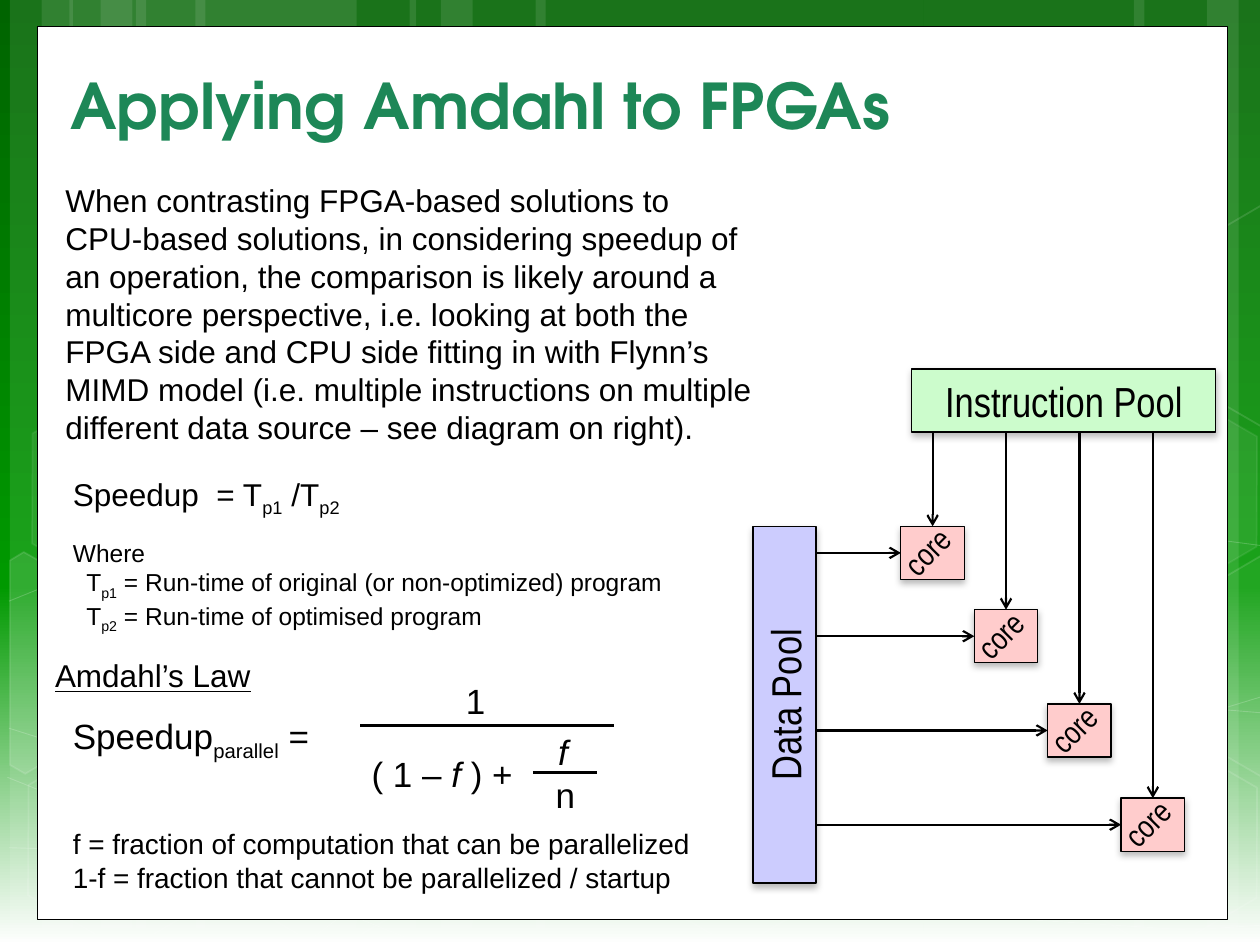
from copy import deepcopy

from lxml import etree
from pptx import Presentation
from pptx.dml.color import RGBColor
from pptx.enum.shapes import MSO_CONNECTOR, MSO_SHAPE
from pptx.enum.text import MSO_ANCHOR, MSO_AUTO_SIZE, PP_ALIGN
from pptx.oxml.ns import qn
from pptx.util import Cm, Pt

RECTANGLE = MSO_SHAPE.RECTANGLE
HEXAGON = MSO_SHAPE.HEXAGON
STRAIGHT = MSO_CONNECTOR.STRAIGHT
MIDDLE = MSO_ANCHOR.MIDDLE
BOTTOM = MSO_ANCHOR.BOTTOM
CENTER = PP_ALIGN.CENTER
GROW = MSO_AUTO_SIZE.SHAPE_TO_FIT_TEXT

BLACK = RGBColor(0x00, 0x00, 0x00)
WHITE = RGBColor(0xFF, 0xFF, 0xFF)
DARK_GREEN = RGBColor(0x00, 0x64, 0x00)
MID_GREEN = RGBColor(0x00, 0x99, 0x00)
TITLE_GREEN = RGBColor(0x1D, 0x87, 0x57)
POOL_GREEN = RGBColor(0xCC, 0xFC, 0xCC)
POOL_BLUE = RGBColor(0xCC, 0xCC, 0xFE)
CORE_PINK = RGBColor(0xFF, 0xCC, 0xCC)

BODY_FONT = "Arial"
DIAGRAM_FONT = "Arial Narrow"
TITLE_FONT = "TeX Gyre Adventor"

STRIPES = [(2.74, 4.45), (0.2, 1.27), (0.84, 2.11), (3.94, 4.45), (1.4, 1.27), (2.03, 2.11),
           (18.62, 4.45), (24.33, 1.27), (22.86, 2.11), (10.8, 7.82), (8.26, 1.27), (8.89, 2.11)]
HEXAGONS = [(8.48, 0.91, 4, 8), (12.62, 14.96, 6, 12), (0.28, 15.01, 0, 12), (0.36, 7.92, 7, 8),
            (4.42, 15.04, 0, 12), (21.18, 15.06, 0, 12), (21.18, 7.98, 7, 8)]
CUT_HEXAGONS = [
    ([(0.2, 11.3), (0.48, 11.13), (2.44, 12.24), (2.41, 14.48), (0.51, 15.6), (0.2, 15.42)], 10),
    ([(23.52, 12.32), (25.43, 11.2), (25.63, 11.33), (25.63, 15.57), (25.45, 15.67), (23.52, 14.55)], 4),
    ([(23.52, 5.26), (25.43, 4.14), (25.65, 4.27), (25.63, 8.51), (25.45, 8.61), (23.52, 7.49)], 0)]
WAVES = [
    [(0.18, 17.09), (4.83, 17.22), (11.63, 16.89), (20.12, 15.67), (25.58, 14)],
    [(0.18, 12.12), (3.07, 10.95), (8.81, 9.83), (16.61, 9.83), (25.58, 11.02)],
    [(0.15, 15.67), (8.48, 19.02)],
    [(0.18, 14.68), (3.25, 15.65), (9.07, 17.09), (15.95, 18.24), (24, 18.75), (25.58, 18.64)],
    [(6.15, 19.02), (9.86, 16.23), (15.44, 14.68), (20.17, 14.27), (24.21, 14.27), (25.55, 14.38)]]


def fade(holder, percent):
    color = holder.find(qn("a:solidFill")).find(qn("a:srgbClr"))
    etree.SubElement(color, qn("a:alpha"), val=str(percent * 1000))


def paint(shape, fill, line=None, width=0.75):
    shape.shadow.inherit = False
    if fill is None:
        shape.fill.background()
    else:
        shape.fill.solid()
        shape.fill.fore_color.rgb = fill
    if line is None:
        shape.line.fill.background()
    else:
        shape.line.color.rgb = line
        shape.line.width = Pt(width)


def paint_faint(shape, fill_alpha, line_alpha, width=1):
    paint(shape, WHITE if fill_alpha else None, WHITE if line_alpha else None, width)
    properties = shape._element.spPr
    if fill_alpha:
        fade(properties, fill_alpha)
    if line_alpha:
        fade(properties.find(qn("a:ln")), line_alpha)


def add_block(page, kind, left, top, width, height):
    return page.shapes.add_shape(kind, Cm(left), Cm(top), Cm(width), Cm(height))


def add_outline(page, points, closed):
    start, *rest = [(Cm(x), Cm(y)) for x, y in points]
    builder = page.shapes.build_freeform(*start)
    builder.add_line_segments(rest, close=closed)
    return builder.convert_to_shape()


def add_spans(para, spans, size, font=BODY_FONT, color=BLACK, bold=False):
    for words, style in spans:
        span = para.add_run()
        span.text = words
        span.font.size = Pt(size)
        span.font.name = font
        span.font.color.rgb = color
        span.font.bold = bold
        span.font.italic = style == "italic"
        span.font.underline = style == "underline"
        if style == "sub":
            span._r.get_or_add_rPr().set("baseline", "-25000")


def add_text(page, left, top, width, height, lines, wrap=True, font=BODY_FONT):
    box = page.shapes.add_textbox(Cm(left), Cm(top), Cm(width), Cm(height))
    frame = box.text_frame
    frame.word_wrap = wrap
    frame.auto_size = GROW
    for index, (spans, size) in enumerate(lines):
        para = frame.add_paragraph() if index else frame.paragraphs[0]
        add_spans(para, spans, size, font)
    return box


def add_line(page, start, end, width, arrow=False):
    line = page.shapes.add_connector(STRAIGHT, *[Cm(value) for value in (*start, *end)])
    line.line.color.rgb = BLACK
    line.line.width = Pt(width)
    if arrow:
        etree.SubElement(line.line._get_or_add_ln(), qn("a:tailEnd"), type="arrow")
    etree.SubElement(line._element.spPr, qn("a:effectLst"))
    return line


def add_diagram_block(page, left, top, width, height, fill, label=""):
    block = add_block(page, RECTANGLE, left, top, width, height)
    paint(block, fill, BLACK)
    effects = block._element.spPr.find(qn("a:effectLst"))
    shadow = etree.SubElement(effects, qn("a:outerShdw"), blurRad=str(Pt(4)), dist=str(Pt(2)),
                              dir="5400000", rotWithShape="0")
    color = etree.SubElement(shadow, qn("a:srgbClr"), val="000000")
    etree.SubElement(color, qn("a:alpha"), val="28000")
    if label:
        block.text_frame.vertical_anchor = MIDDLE
        para = block.text_frame.paragraphs[0]
        para.alignment = CENTER
        add_spans(para, [(label, "")], 24, DIAGRAM_FONT)
    return block


def add_backdrop(page, height):
    fill = page.background.fill
    fill.gradient()
    fill.gradient_angle = 270
    stops = page._element.find(".//" + qn("a:gsLst"))
    stops.append(deepcopy(stops[-1]))
    for stop, position, color in zip(fill.gradient_stops, (0, 0.62, 1), (DARK_GREEN, MID_GREEN, WHITE)):
        stop.position = position
        stop.color.rgb = color
    for left, width in STRIPES:
        paint_faint(add_block(page, RECTANGLE, left, 0, width, height), 10, 0)
    for points in WAVES:
        paint_faint(add_outline(page, points, False), 0, 20, 0.5)
    for left, top, fill_alpha, line_alpha in HEXAGONS:
        hexagon = add_block(page, HEXAGON, left, top, 4.45, 3.86)
        hexagon.adjustments[0] = 0.285
        hexagon.rotation = 30
        paint_faint(hexagon, fill_alpha, line_alpha)
    for points, fill_alpha in CUT_HEXAGONS:
        paint_faint(add_outline(page, points, True), fill_alpha, 12)
    paint(add_block(page, RECTANGLE, 0.76, 0.53, 23.98, 18.01), WHITE, BLACK, 0.5)


def add_title(page, left, top, width, height):
    box = page.shapes.add_textbox(Cm(left), Cm(top), Cm(width), Cm(height))
    box.text_frame.word_wrap = True
    box.text_frame.vertical_anchor = BOTTOM
    add_spans(box.text_frame.paragraphs[0], [("Applying Amdahl to FPGAs", "")], 36,
              TITLE_FONT, TITLE_GREEN, True)


def add_mimd_diagram(page, left, top, width, height):
    thickness = 1.27
    core_width, core_height, core_step = 1.28, 1.07, 1.48
    pool_left, pool_top, pool_length = left + 3.2, top + 3.17, height - 3.17
    add_diagram_block(page, pool_left - 0.64 + 0.64, top, width - 3.2, thickness, POOL_GREEN,
                      "Instruction Pool")
    data_pool = add_diagram_block(page, left + (thickness - pool_length) / 2,
                                  pool_top + (pool_length - thickness) / 2,
                                  pool_length, thickness, POOL_BLUE, "Data Pool")
    data_pool.rotation = 270
    for index, drop in enumerate((0, 1.68, 3.58, 5.48)):
        core_left, core_top = left + 2.98 + index * core_step, pool_top + drop
        core = add_diagram_block(page, core_left, core_top, core_width, core_height, CORE_PINK)
        center, middle = core_left + core_width / 2, core_top + core_height / 2
        data_arrow = add_line(page, (left + thickness, middle), (core_left, middle), 1.25, True)
        data_arrow.end_connect(core, 1)
        instruction_arrow = add_line(page, (center, top + thickness), (center, core_top), 1.25, True)
        instruction_arrow.end_connect(core, 0)
        label = add_text(page, center - 0.88, middle - 0.55, 1.55, 1.02, [([("core", "")], 18)],
                         False, DIAGRAM_FONT)
        label.rotation = 314.8


def add_speedup(page, left, top, width, height):
    box = add_text(page, left, top, width, height, [
        ([("Speedup  = T", ""), ("p1", "sub"), (" /T", ""), ("p2", "sub")], 18),
        ([("Where", "")], 14),
        ([("T", ""), ("p1", "sub"), (" = Run-time of original (or non-optimized) program", "")], 14),
        ([("T", ""), ("p2", "sub"), (" = Run-time of optimised program", "")], 14)])
    paras = box.text_frame.paragraphs
    paras[1].space_before = Pt(11.5)
    for para in paras[2:]:
        para._p.get_or_add_pPr().set("marL", str(Cm(0.27)))


def add_amdahl_law(page, left, top):
    parts = [(0, 0, 4.5, [("Amdahl’s Law", "underline")], 18),
             (0.36, 1.17, 5.51, [("Speedup", ""), ("parallel", "sub"), (" =", "")], 20),
             (8.28, 0.46, 0.91, [("1", "")], 20),
             (6.38, 1.93, 3.38, [("( 1 – ", ""), ("f", "italic"), (" ) +", "")], 20),
             (10.14, 1.5, 0.91, [("f", "italic")], 20),
             (10.09, 2.36, 0.91, [("n", "")], 20)]
    for x, y, width, spans, size in parts:
        add_text(page, left + x, top + y, width, 1.1, [(spans, size)], False)
    for x, y, length in ((6.4, 1.52, 5.11), (9.88, 2.46, 1.3)):
        add_line(page, (left + x, top + y), (left + x + length, top + y), 1.5)


def main():
    deck = Presentation()
    deck.slide_width, deck.slide_height = Cm(25.4), Cm(19.05)
    page = deck.slides.add_slide(deck.slide_layouts[6])
    add_backdrop(page, 19.05)
    add_title(page, 1.17, 1.07, 21.39, 1.93)
    add_mimd_diagram(page, 15.18, 7.44, 9.33, 10.36)
    add_text(page, 1.07, 3.53, 14.35, 5.64, [([(
        "When contrasting FPGA-based solutions to CPU-based solutions, in considering speedup of "
        "an operation, the comparison is likely around a multicore perspective, i.e. looking at "
        "both the FPGA side and CPU side fitting in with Flynn’s MIMD model (i.e. multiple "
        "instructions on multiple different data source – see diagram on right).", "")], 18)])
    add_speedup(page, 1.22, 9.45, 13.23, 3.28)
    add_amdahl_law(page, 0.86, 13.11)
    add_text(page, 1.22, 16.54, 14.35, 1.63, [
        ([("f = fraction of computation that can be parallelized", "")], 16),
        ([("1-f = fraction that cannot be parallelized / startup", "")], 16)])
    deck.save("out.pptx")


if __name__ == "__main__":
    main()
